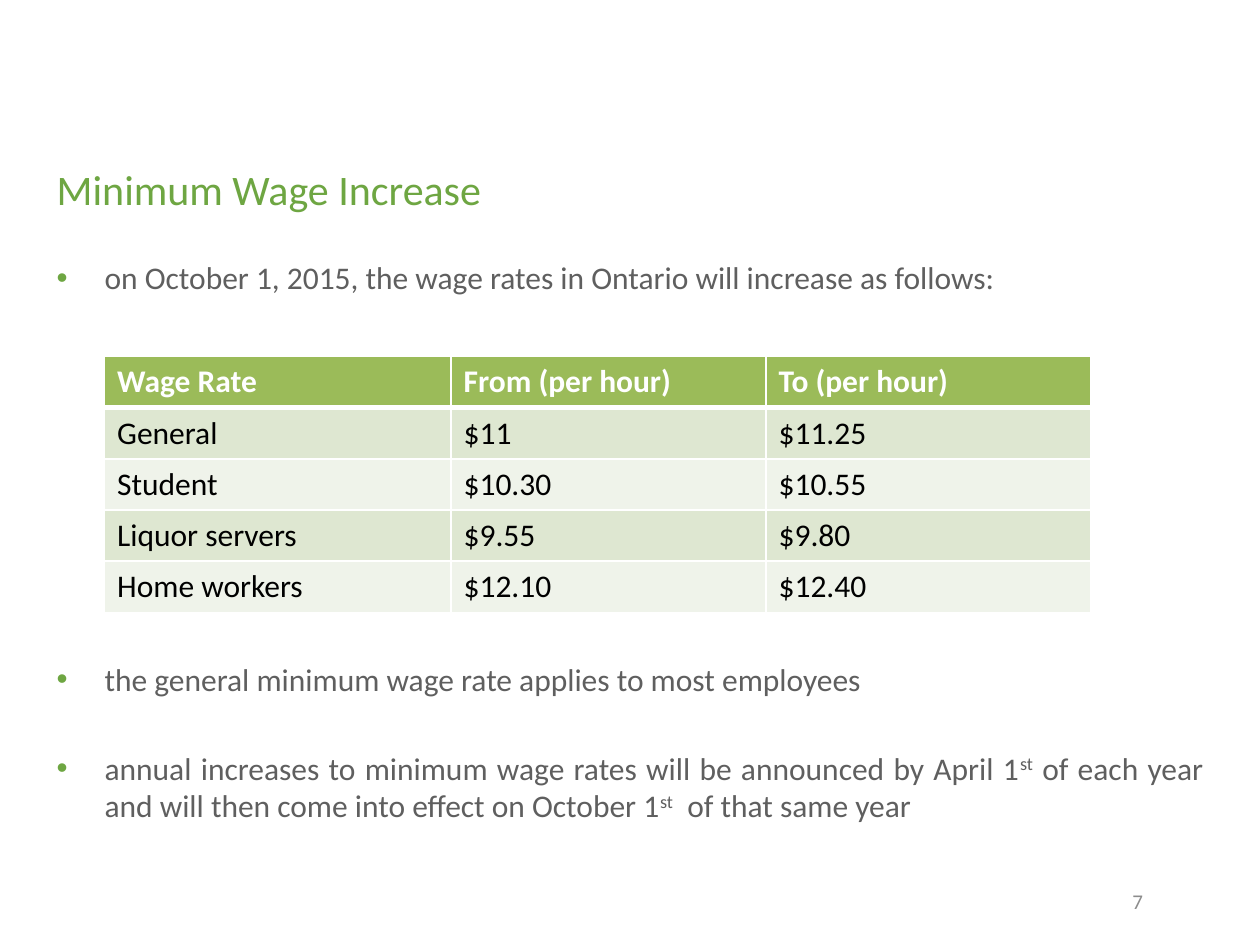
from lxml import etree
from pptx import Presentation
from pptx.dml.color import RGBColor
from pptx.enum.text import MSO_ANCHOR, MSO_AUTO_SIZE, PP_ALIGN
from pptx.oxml.ns import qn
from pptx.util import Inches, Pt

LEFT, RIGHT, JUSTIFY = PP_ALIGN.LEFT, PP_ALIGN.RIGHT, PP_ALIGN.JUSTIFY
BOTTOM, MIDDLE = MSO_ANCHOR.BOTTOM, MSO_ANCHOR.MIDDLE
NO_AUTOFIT = MSO_AUTO_SIZE.NONE

COLORS = {
    "green": "6EA642", "text": "5F5F5F", "number": "8C8C8C",
    "header": "9BBB59", "band_dark": "DEE7D1", "band_light": "EFF3EA",
    "white": "FFFFFF", "black": "000000",
}


def add_run(p, text, size, color, bold=False):
    r = p.add_run()
    r.text = text
    r.font.name = "Calibri"
    r.font.size = Pt(size)
    r.font.bold = bold
    r.font.color.rgb = RGBColor.from_string(COLORS[color])
    return r


def add_border(cell, side, width):
    """Draw a white line on one side (L, R, T or B) of a table cell."""
    ln = etree.SubElement(cell._tc.get_or_add_tcPr(), qn(f"a:ln{side}"), w=str(Pt(width)))
    fill = etree.SubElement(ln, qn("a:solidFill"))
    etree.SubElement(fill, qn("a:srgbClr"), val=COLORS["white"])


prs = Presentation()
prs.slide_width, prs.slide_height = Inches(10), Inches(7.5)
s = prs.slides.add_slide(prs.slide_layouts[1])

# Title
title = s.shapes.title
title.left, title.top = Inches(0.35), Inches(1.25)
title.width, title.height = Inches(9.3), Inches(0.5)
tf = title.text_frame
tf.auto_size = NO_AUTOFIT
tf.vertical_anchor = BOTTOM
p = tf.paragraphs[0]
p.alignment = LEFT
add_run(p, "Minimum Wage Increase", 24, "green")

# Bullets: space before in points (the first gap holds the table), then runs
bullets = [
    (0, ["on October 1, 2015, the wage rates in Ontario will increase as follows:"]),
    (208, ["the general minimum wage rate applies to most employees"]),
    (29, ["annual increases to minimum wage rates will be announced by April 1", "st",
          " of each year and will then come into effect on October 1", "st",
          "  of that same year"]),
]
body = s.placeholders[1]
body.left, body.top = Inches(0.35), Inches(2)
body.width, body.height = Inches(9.3), Inches(4.5)
tf = body.text_frame
tf.auto_size = NO_AUTOFIT
for i, (space, texts) in enumerate(bullets):
    p = tf.add_paragraph() if i else tf.paragraphs[0]
    pPr = p._p.get_or_add_pPr()
    pPr.set("marL", str(Inches(0.38)))
    pPr.set("indent", str(Inches(-0.38)))
    bullet_color = etree.SubElement(pPr, qn("a:buClr"))
    etree.SubElement(bullet_color, qn("a:srgbClr"), val=COLORS["green"])
    etree.SubElement(pPr, qn("a:buFont"), typeface="Arial")
    etree.SubElement(pPr, qn("a:buChar"), char="•")
    p.alignment = JUSTIFY
    p.space_before = Pt(space)
    for text in texts:
        r = add_run(p, text, 18, "text")
        if text == "st":
            r.font._element.set("baseline", "30000")

# Wage table
rows = [
    ("Wage Rate", "From (per hour)", "To (per hour)"),
    ("General", "$11", "$11.25"),
    ("Student", "$10.30", "$10.55"),
    ("Liquor servers", "$9.55", "$9.80"),
    ("Home workers", "$12.10", "$12.40"),
]
col_widths = [2.75, 2.5, 2.58]
table = s.shapes.add_table(len(rows), len(col_widths), Inches(0.83), Inches(2.83),
                           Inches(sum(col_widths)), Inches(2.03)).table
for col, width in zip(table.columns, col_widths):
    col.width = Inches(width)
for i, row in enumerate(rows):
    header = i == 0
    fill = "header" if header else "band_dark" if i % 2 else "band_light"
    for j, text in enumerate(row):
        cell = table.cell(i, j)
        add_border(cell, "L", 1)
        add_border(cell, "R", 1)
        add_border(cell, "T", 3 if i == 1 else 1)
        add_border(cell, "B", 3 if header else 1)
        cell.fill.solid()
        cell.fill.fore_color.rgb = RGBColor.from_string(COLORS[fill])
        add_run(cell.text_frame.paragraphs[0], text, 18,
                "white" if header else "black", bold=header)

# Page number
number = s.shapes.add_textbox(Inches(7.17), Inches(6.95), Inches(2), Inches(0.4))
tf = number.text_frame
tf.word_wrap = True
tf.vertical_anchor = MIDDLE
p = tf.paragraphs[0]
p.alignment = RIGHT
add_run(p, "7", 12, "number")

prs.save("out.pptx")
